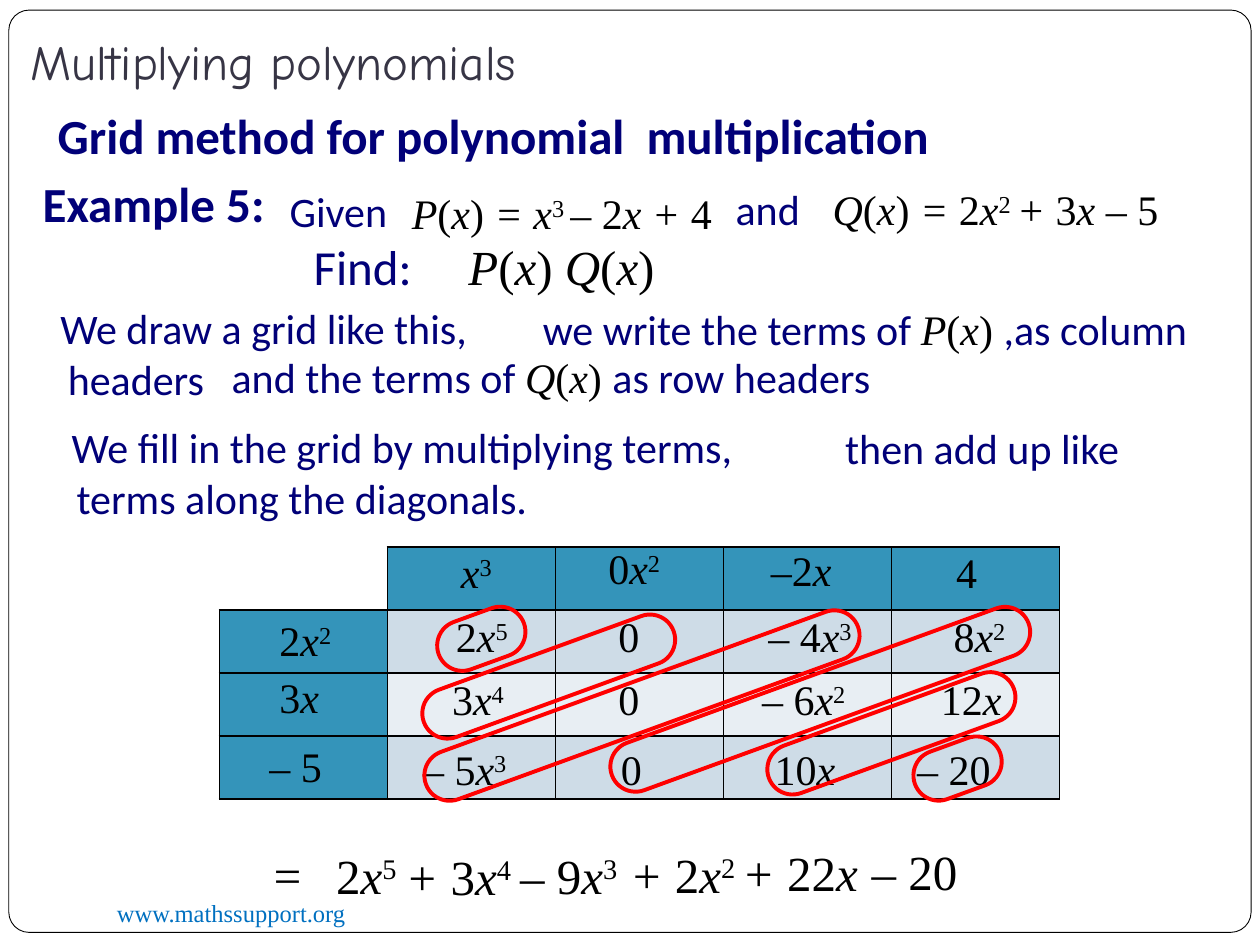
from itertools import groupby

from lxml import etree
from pptx import Presentation
from pptx import util as u
from pptx.dml.color import RGBColor
from pptx.enum import shapes as sh, text as tx
from pptx.oxml import ns

PX = 9144  # 100 px to the inch
NAVY = RGBColor(0x01, 0x00, 0x78)
INK = RGBColor(0x37, 0x35, 0x45)
BLUE = RGBColor(0x00, 0x70, 0xC0)
TEAL = RGBColor(0x34, 0x94, 0xBA)
PALE = RGBColor(0xCE, 0xDC, 0xE7)
MIST = RGBColor(0xE8, 0xEE, 0xF3)
RED = RGBColor(0xFF, 0x00, 0x00)
BLACK = RGBColor(0x00, 0x00, 0x00)
WHITE = RGBColor(0xFF, 0xFF, 0xFF)
SANS, SERIF, HAND = "Calibri", "Times New Roman", "Comic Neue"


def emu(*vals):
    return [v * PX for v in vals]


def add_math(para, term):
    """Letters and signs lean; a character after ^ is raised."""
    marks, up = [], False
    for char in term:
        if char == "^":
            up = True
            continue
        marks.append((char, (char in "PQx+–= " and not up, up)))
        up = False
    for (lean, high), group in groupby(marks, key=lambda m: m[1]):
        run = para.add_run()
        run.text = "".join(m[0] for m in group)
        run.font.name = SERIF
        run.font.color.rgb = BLACK
        run.font.italic = lean
        if high:
            run.font._element.set("baseline", "30000")


def add_text(slide, box, words, size=24, face=SANS, color=NAVY, bold=False, indent=0):
    """Parts between $ signs are set as maths."""
    shape = slide.shapes.add_textbox(*emu(*box))
    frame = shape.text_frame
    frame.word_wrap = True
    para = frame.paragraphs[0]
    if indent:
        props = para._p.get_or_add_pPr()
        props.set("marL", "0")
        props.set("indent", str(indent * PX))
    font = para.font
    font.size, font.name, font.bold = u.Pt(size), face, bold
    font.color.rgb = color
    for i, part in enumerate(words.split("$")):
        if i % 2:
            add_math(para, part)
        elif part:
            para.add_run().text = part
    return frame


def add_pill(slide, box, adj, line, width, fill=None, turn=0):
    pill = slide.shapes.add_shape(sh.MSO_SHAPE.ROUNDED_RECTANGLE, *emu(*box))
    pill.shadow.inherit = False
    pill.adjustments[0] = adj
    pill.rotation = turn
    pill.line.color.rgb = line
    pill.line.width = u.Pt(width)
    if fill is None:
        pill.fill.background()
    else:
        pill.fill.solid()
        pill.fill.fore_color.rgb = fill


def set_edge(cell, side, color):
    props = cell._tc.get_or_add_tcPr()
    edge = etree.SubElement(props, ns.qn("a:" + side), w=str(u.Pt(1)))
    fill = etree.SubElement(edge, ns.qn("a:solidFill"))
    etree.SubElement(fill, ns.qn("a:srgbClr"), val=str(color))


def draw_frame(slide, box):
    x, y, w, h = box
    add_pill(slide, box, 0.022, BLACK, 0.5, WHITE)
    add_text(slide, (x + 76, y + 700, 325, 34), "www.mathssupport.org", 14, SERIF, BLUE)
    title = add_text(slide, (x + 17, y + 2, 900, 62), "Multiplying polynomials", 28, HAND, INK)
    title.vertical_anchor = tx.MSO_ANCHOR.BOTTOM
    title.margin_left = title.margin_right = title.margin_bottom = 0


def draw_task(slide, box):
    x, y, w, h = box
    add_text(slide, (x + 12, y, 890, 57), "Grid method for polynomial  multiplication", 28, bold=True)
    add_text(slide, (x, y + 54, 225, 57), "Example 5:", 28, bold=True)
    for left, top, wide, size, words in (
        (196, 63, 133, 24, "Given"),
        (293, 65, 285, 24, "$P(x) = x^3^ – 2x + 4$"),
        (550, 62, 133, 24, "and"),
        (627, 62, 341, 24, "$Q(x) = 2x^2^ + 3x – 5$"),
        (215, 104, 133, 28, "Find:"),
        (338, 104, 176, 28, "$P(x) Q(x)$"),
    ):
        add_text(slide, (x + left, y + top, wide, 50), words, size)


def draw_steps(slide, box):
    x, y, w, h = box
    add_text(slide, (x, y, 509, 50), "We draw a grid like this,")
    add_text(slide, (x + 6, y + 1, 923, 91),
             "we write the terms of $P(x) $,as column headers", indent=377)
    add_text(slide, (x + 136, y + 39, 638, 50), "and the terms of $Q(x) $as row headers")
    add_text(slide, (x + 9, y + 95, 914, 50), "We fill in the grid by multiplying terms,")
    add_text(slide, (x + 13, y + 95, 914, 91),
             "then add up like terms along the diagonals.", indent=610)


def draw_grid(slide, box):
    x, y, w, h = box
    table = slide.shapes.add_table(4, 5, *emu(*box)).table
    for r in range(4):
        table.rows[r].height = h * PX // 4
        for c in range(5):
            cell, blank = table.cell(r, c), r == c == 0
            for side in ("lnL", "lnR", "lnT", "lnB"):
                set_edge(cell, side, WHITE if blank and side in ("lnL", "lnT") else BLACK)
            if blank:
                cell.fill.background()
                continue
            cell.fill.solid()
            cell.fill.fore_color.rgb = TEAL if 0 in (r, c) else (MIST if r == 2 else PALE)

    # Headers and products: left, top, term
    for left, top, term in (
        (182, -5, "x^3"), (299, -8, "0x^2"), (428, -7, "‒2x"), (575, -5, "4"),
        (38, 49, "2x^2"), (178, 46, "2x^5"), (307, 46, "0"), (426, 46, "– 4x^3"), (573, 46, "8x^2"),
        (38, 94, "3x"), (175, 96, "3x^4"), (307, 96, "0"), (421, 96, "– 6x^2"), (563, 96, "12x"),
        (30, 149, "‒ 5"), (152, 151, "– 5x^3"), (309, 151, "0"), (431, 151, "10x"), (544, 151, "– 20"),
    ):
        add_text(slide, (x + left, y + top, 114, 50), f"${term}$")

    # Rings round the like terms: left, top, length
    for left, top, size in (
        (172, 53, 72), (156, 83, 211), (153, 106, 365),
        (301, 101, 352), (430, 128, 207), (550, 156, 72),
    ):
        add_pill(slide, (x + left, y + top, size, 40), 0.5, RED, 2.25, turn=340)


def draw_sum(slide, box):
    x, y, w, h = box
    for left, top, term in (
        (0, 2, "="), (52, 3, "2x^5"), (107, 4, "+ 3x^4"), (198, 3, "– 9x^3"),
        (285, 2, "+ 2x^2"), (374, 1, "+ 22x"), (477, 0, "– 20"),
    ):
        add_text(slide, (x + left, y + top, 133, h), f"${term}$", 28)


def main():
    deck = Presentation()
    deck.slide_width, deck.slide_height = emu(1000, 750)
    slide = deck.slides.add_slide(deck.slide_layouts[6])
    draw_frame(slide, (7, 8, 986, 732))
    draw_task(slide, (24, 79, 968, 161))
    draw_steps(slide, (38, 235, 929, 186))
    draw_grid(slide, (174, 434, 667, 200))
    draw_sum(slide, (205, 663, 610, 57))
    deck.save("out.pptx")


if __name__ == "__main__":
    main()
